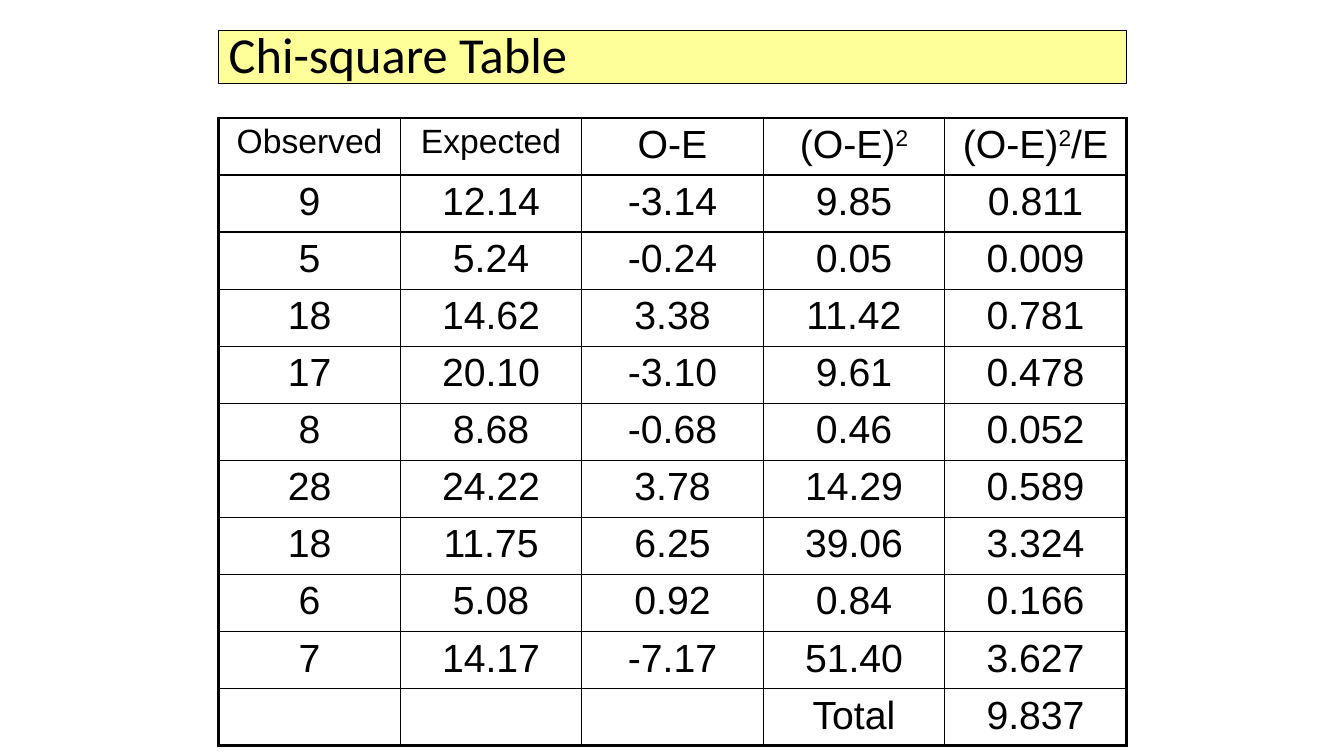
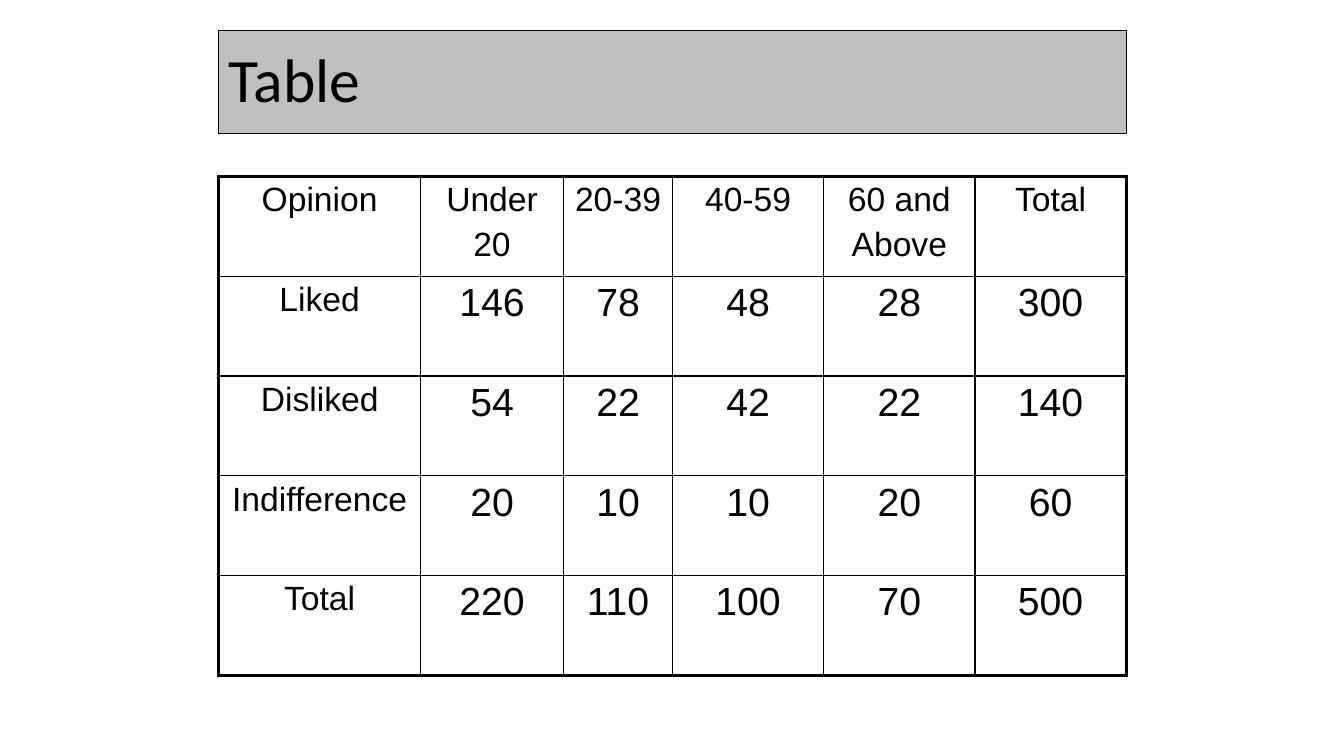
from dataclasses import dataclass

from lxml.etree import SubElement
from pptx import Presentation
from pptx.dml.color import RGBColor as RGB
from pptx.enum.shapes import MSO_SHAPE as SHAPE
from pptx.enum.text import MSO_ANCHOR as ANCHOR, PP_ALIGN as ALIGN
from pptx.oxml.ns import qn
from pptx.util import Inches, Pt


@dataclass(frozen=True)
class Theme:
    ink: str = "000000"
    yellow: str = "FFFF99"
    grey: str = "C0C0C0"
    title_font: str = "Calibri"
    table_font: str = "Arial"
    label_size: int = 24
    value_size: int = 28
    title_line: float = 0.75
    inner_line: float = 1
    outer_line: float = 2.25
    left: float = 2.17
    width: float = 9
    title_top: float = 0.3


theme = Theme()
ink = RGB.from_string(theme.ink)

# Content of the two slides
chi_square_rows = [
    ["Observed", "Expected", "O-E", "(O-E)²", "(O-E)²/E"],
    ["9", "12.14", "-3.14", "9.85", "0.811"],
    ["5", "5.24", "-0.24", "0.05", "0.009"],
    ["18", "14.62", "3.38", "11.42", "0.781"],
    ["17", "20.10", "-3.10", "9.61", "0.478"],
    ["8", "8.68", "-0.68", "0.46", "0.052"],
    ["28", "24.22", "3.78", "14.29", "0.589"],
    ["18", "11.75", "6.25", "39.06", "3.324"],
    ["6", "5.08", "0.92", "0.84", "0.166"],
    ["7", "14.17", "-7.17", "51.40", "3.627"],
    ["", "", "", "Total", "9.837"],
]
opinion_rows = [
    ["Opinion", "Under\n20", "20-39", "40-59", "60 and\nAbove", "Total"],
    ["Liked", "146", "78", "48", "28", "300"],
    ["Disliked", "54", "22", "42", "22", "140"],
    ["Indifference", "20", "10", "10", "20", "60"],
    ["Total", "220", "110", "100", "70", "500"],
]
pages = [
    dict(title="Chi-square Table", title_size=36, title_height=0.53, band=theme.yellow,
         rows=chi_square_rows, top=1.17, height=6.23, columns=[1.8] * 5,
         is_label=lambda row, column: row == 0 and column < 2),
    dict(title="Table", title_size=44, title_height=1.03, band=theme.grey,
         rows=opinion_rows, top=1.75, height=4.95, columns=[2, 1.42, 1.08, 1.5, 1.5, 1.5],
         is_label=lambda row, column: row == 0 or column == 0),
]


def draw_borders(cell, outer_sides):
    """Rule all four sides of a cell, heavier on the table's outer edge."""
    properties = cell._tc.get_or_add_tcPr()
    for position, side in enumerate("LRTB"):
        weight = theme.outer_line if side in outer_sides else theme.inner_line
        border = SubElement(properties, qn(f"a:ln{side}"), w=str(Pt(weight)))
        fill = SubElement(border, qn("a:solidFill"))
        SubElement(fill, qn("a:srgbClr"), val=theme.ink)
        properties.insert(position, border)


def write_cell(cell, text, size):
    """Write centred lines, raising each ² as a superscript 2."""
    frame = cell.text_frame
    for number, line in enumerate(text.split("\n")):
        paragraph = frame.add_paragraph() if number else frame.paragraphs[0]
        paragraph.alignment = ALIGN.CENTER
        if number:
            paragraph.space_before = Pt(0.2 * size)
        paragraph.font.size = Pt(size)
        paragraph.font.name = theme.table_font
        paragraph.font.color.rgb = ink
        base, square, rest = line.partition("²")
        paragraph.add_run().text = base
        if square:
            exponent = paragraph.add_run()
            exponent.text = "2"
            exponent._r.get_or_add_rPr().set("baseline", "30000")
        if rest:
            paragraph.add_run().text = rest


deck = Presentation()
deck.slide_width, deck.slide_height = Inches(13.33), Inches(7.5)

for page in pages:
    slide = deck.slides.add_slide(deck.slide_layouts[6])

    # Title band
    band = slide.shapes.add_shape(
        SHAPE.RECTANGLE, Inches(theme.left), Inches(theme.title_top),
        Inches(theme.width), Inches(page["title_height"]))
    band.shadow.inherit = False
    band.fill.solid()
    band.fill.fore_color.rgb = RGB.from_string(page["band"])
    band.line.color.rgb = ink
    band.line.width = Pt(theme.title_line)
    band.text_frame.word_wrap = True
    band.text_frame.vertical_anchor = ANCHOR.MIDDLE
    title = band.text_frame.paragraphs[0]
    title.text = page["title"]
    title.alignment = ALIGN.LEFT
    title.line_spacing = 0.9
    title.font.size = Pt(page["title_size"])
    title.font.name = theme.title_font
    title.font.color.rgb = ink

    # Table grid
    rows, columns = page["rows"], page["columns"]
    grid = slide.shapes.add_table(
        len(rows), len(columns), Inches(theme.left), Inches(page["top"]),
        Inches(theme.width), Inches(page["height"])).table
    grid.first_row = grid.horz_banding = False
    for column, width in zip(grid.columns, columns):
        column.width = Inches(width)

    # Table cells
    last_row, last_column = len(rows) - 1, len(columns) - 1
    for r, row in enumerate(rows):
        for c, text in enumerate(row):
            cell = grid.cell(r, c)
            cell.fill.background()
            edges = {"L": c == 0, "R": c == last_column, "T": r == 0, "B": r == last_row}
            draw_borders(cell, [side for side, outer in edges.items() if outer])
            if text:
                size = theme.label_size if page["is_label"](r, c) else theme.value_size
                write_cell(cell, text, size)

deck.save("out.pptx")
